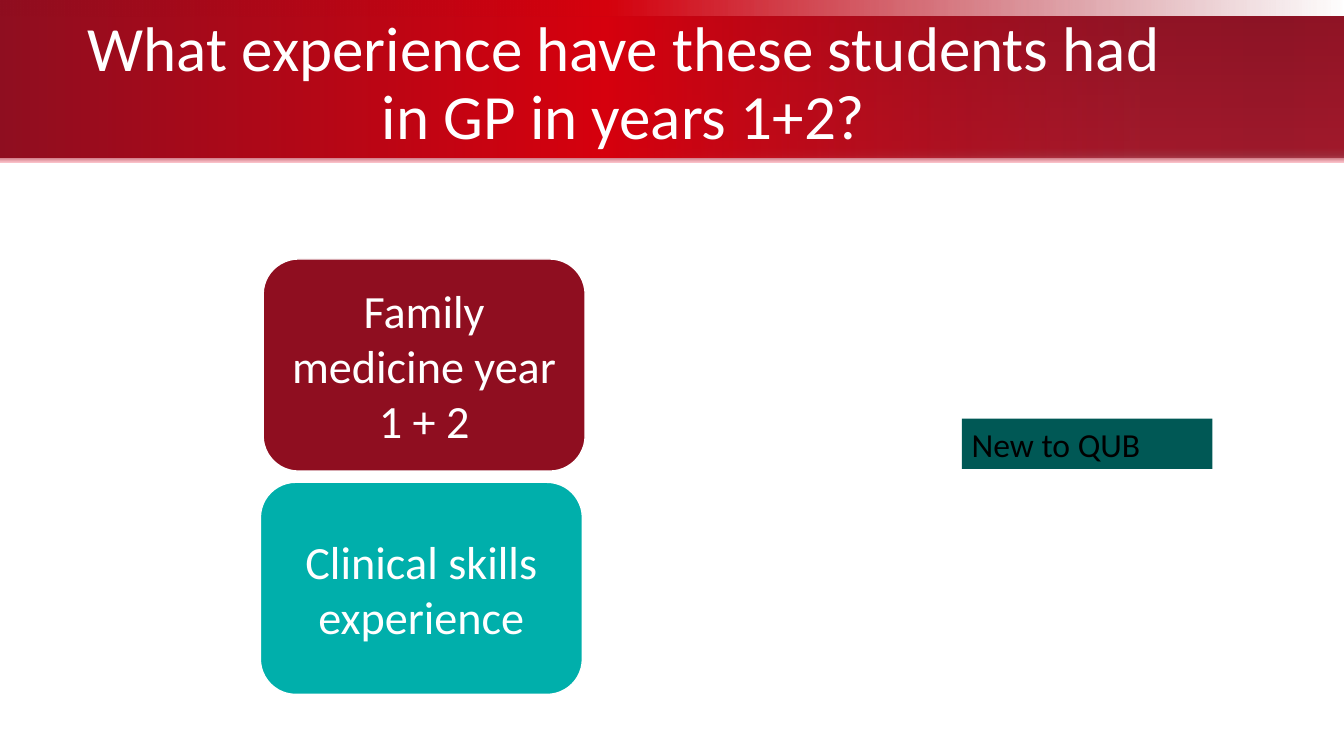
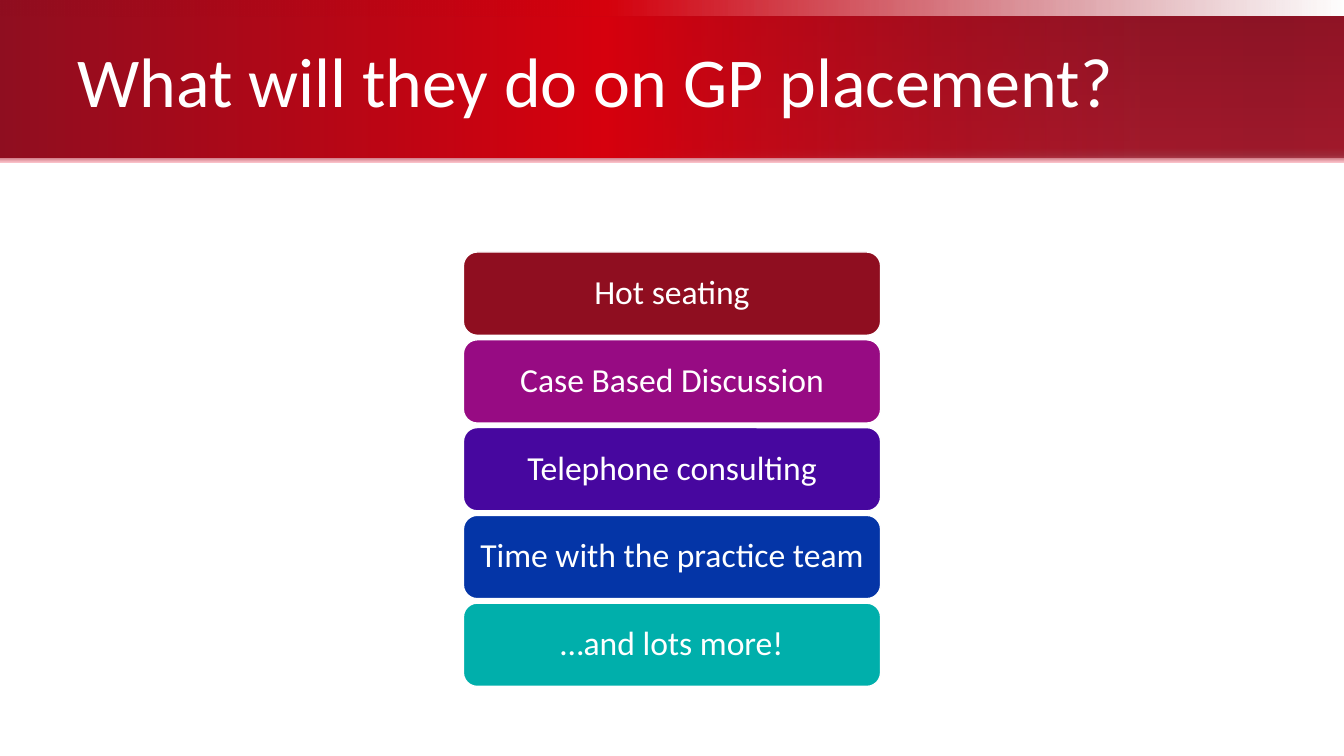
"""Builds two slides about student placements in general practice."""
from lxml.etree import SubElement
from pptx import Presentation
from pptx.dml.color import RGBColor
from pptx.enum.shapes import MSO_SHAPE
from pptx.enum.text import MSO_ANCHOR, PP_ALIGN
from pptx.oxml.ns import qn
from pptx.util import Pt

WIDTH, HEIGHT = 960, 540
CRIMSON, RED, TEAL, DARK_TEAL = "8F0E20", "D6000D", "00AFAB", "005855"
PURPLE, VIOLET, BLUE = "970B83", "47079F", "0435A7"
WHITE, BLACK = "FFFFFF", "000000"
FONT = "Calibri"

BANDS = [
    (0, 12, 0, [(0, CRIMSON, 100), (45, RED, 100), (100, CRIMSON, 0)]),
    (11.5, 104.5, 90, [(0, "931E2F", 100), (90, "BA2A3C", 100),
                       (95, "B54E5C", 100), (100, "F9BFC7", 100)]),
    (11.5, 101, 0, [(0, CRIMSON, 100), (45, RED, 100), (85, CRIMSON, 60),
                    (95, "890D1F", 60), (100, CRIMSON, 60)]),
]


def color(value):
    return RGBColor.from_string(value)


class Deck:
    def __init__(self):
        self.presentation = Presentation()
        self.presentation.slide_width = Pt(WIDTH)
        self.presentation.slide_height = Pt(HEIGHT)
        self.slide = None

    def add_slide(self, title, size, align=PP_ALIGN.LEFT):
        layout = self.presentation.slide_layouts[6]
        self.slide = self.presentation.slides.add_slide(layout)
        for band in BANDS:
            self.band(*band)
        box = self.slide.shapes.add_textbox(Pt(48), Pt(11.5), Pt(795), Pt(98.5))
        self.put_text(box, title, size, align=align, spacing=0.9)

    def shape(self, kind, left, top, width, height):
        shape = self.slide.shapes.add_shape(
            kind, Pt(left), Pt(top), Pt(width), Pt(height))
        shape.shadow.inherit = False
        shape.line.fill.background()
        return shape

    def band(self, top, height, angle, stops):
        shape = self.shape(MSO_SHAPE.RECTANGLE, 0, top, WIDTH, height)
        shape.fill.gradient()
        shape.fill.gradient_angle = (360 - angle) % 360
        stop_list = shape.element.spPr.find(qn("a:gradFill")).find(qn("a:gsLst"))
        for old_stop in list(stop_list):
            stop_list.remove(old_stop)
        for position, value, opacity in stops:
            stop = SubElement(stop_list, qn("a:gs"), pos=str(position * 1000))
            paint = SubElement(stop, qn("a:srgbClr"), val=value)
            if opacity < 100:
                SubElement(paint, qn("a:alpha"), val=str(opacity * 1000))

    def put_text(self, shape, text, size, text_color=WHITE,
                 align=PP_ALIGN.CENTER, anchor=MSO_ANCHOR.MIDDLE,
                 spacing=1.0, insets=(7.2, 3.6)):
        frame = shape.text_frame
        across, down = insets
        frame_format = {"word_wrap": True, "vertical_anchor": anchor,
                        "margin_left": Pt(across), "margin_right": Pt(across),
                        "margin_top": Pt(down), "margin_bottom": Pt(down)}
        for name, value in frame_format.items():
            setattr(frame, name, value)
        paragraph = frame.paragraphs[0]
        paragraph.alignment = align
        paragraph.line_spacing = spacing
        run = paragraph.add_run()
        run.text = text
        for name, value in {"name": FONT, "size": Pt(size)}.items():
            setattr(run.font, name, value)
        run.font.color.rgb = color(text_color)

    def card(self, text, fill, left, top, width, height, size, **text_format):
        shape = self.shape(MSO_SHAPE.ROUNDED_RECTANGLE, left, top, width, height)
        shape.fill.solid()
        shape.fill.fore_color.rgb = color(fill)
        shape.line.color.rgb = color(WHITE)
        shape.line.width = Pt(1)
        self.put_text(shape, text, size, **text_format)

    def tag(self, text, left, top, width, height):
        shape = self.shape(MSO_SHAPE.RECTANGLE, left, top, width, height)
        shape.fill.solid()
        shape.fill.fore_color.rgb = color(DARK_TEAL)
        self.put_text(shape, text, 24, BLACK, PP_ALIGN.LEFT, MSO_ANCHOR.TOP)


def main():
    deck = Deck()

    deck.add_slide("What experience have these students had in GP in years 1+2?",
                   45, PP_ALIGN.CENTER)
    for text, fill, left, top in [
            ("Family medicine year 1 + 2", CRIMSON, 188, 185),
            ("Clinical skills experience", TEAL, 186, 344.5)]:
        deck.card(text, fill, left, top, 230, 151.5, 33, insets=(10, 5))
    deck.tag("New to QUB", 687, 299, 179, 36)

    deck.add_slide("What will they do on GP placement?", 50)
    activities = [("Hot seating", CRIMSON), ("Case Based Discussion", PURPLE),
                  ("Telephone consulting", VIOLET),
                  ("Time with the practice team", BLUE),
                  ("…and lots more!", TEAL)]
    width, height, pitch = 298, 59.5, 62.7
    for index, (text, fill) in enumerate(activities):
        deck.card(text, fill, (WIDTH - width) / 2, 180 + index * pitch,
                  width, height, 24, spacing=0.9)

    deck.presentation.save("out.pptx")


if __name__ == "__main__":
    main()
